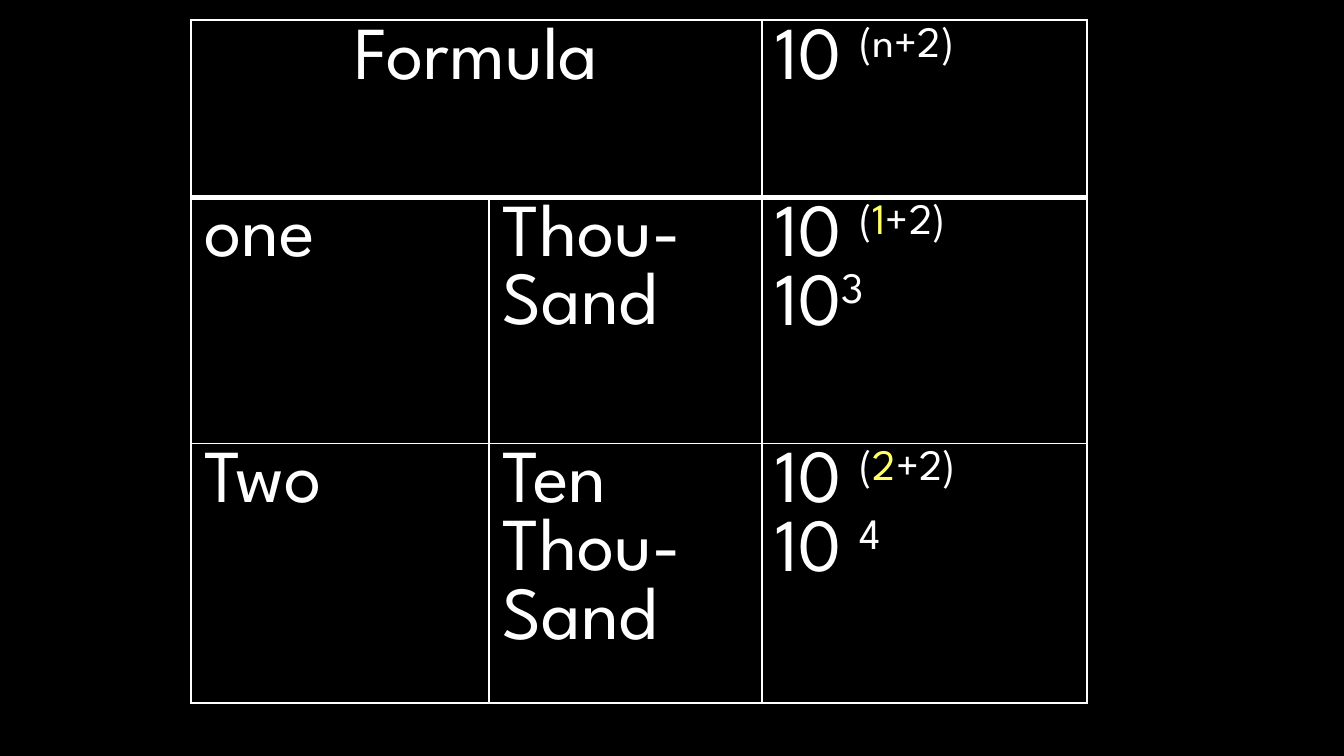
import pptx
import pptx.util
import pptx.dml.color
import pptx.enum.text
import pptx.oxml

Inches, Pt = pptx.util.Inches, pptx.util.Pt
RGB = pptx.dml.color.RGBColor.from_string
ALIGN = pptx.enum.text.PP_ALIGN
HUES = {"back": "000000", "text": "FFFFFF", "mark": "FFFF66"}
NS = "http://schemas.openxmlformats.org/drawingml/2006/main"
FONT = {"name": "League Spartan", "size": Pt(40), "bold": False}


# Each cell is a list of lines; each line lists (text, raised, colour) runs.
def power(n):
    return [("10 ", False, "text"), ("(", True, "text"),
            (n, True, "mark"), ("+2)", True, "text")]


def plain(*lines):
    return [[(line, False, "text")] for line in lines]


rows = [
    [plain("Formula"), [],
     [[("10 ", False, "text"), ("(n+2)", True, "text")]]],
    [plain("one"), plain("Thou-", "Sand"),
     [power("1"), [("10", False, "text"), ("3", True, "text")]]],
    [plain("Two"), plain("Ten", "Thou-", "Sand"),
     [power("2"), [("10 ", False, "text"), ("4", True, "text")]]],
]
widths = [2.22, 2.03, 2.42]
heights = [1.32, 1.83, 1.93]

deck = pptx.Presentation()
deck.slide_width = Inches(10)
deck.slide_height = Inches(10) * 9 // 16
slide = deck.slides.add_slide(deck.slide_layouts[6])
slide.background.fill.solid()
slide.background.fill.fore_color.rgb = RGB(HUES["back"])

frame = slide.shapes.add_table(
    len(rows), len(widths), Inches(1.42), Inches(0.15),
    Inches(sum(widths)), Inches(sum(heights)))
table = frame.table
table.first_row = table.horz_banding = False
for col, width in zip(table.columns, widths):
    col.width = Inches(width)
for row, height in zip(table.rows, heights):
    row.height = Inches(height)
frame.height = Inches(5.25)
table.cell(0, 0).merge(table.cell(0, 1))

for r, row in enumerate(rows):
    for c, lines in enumerate(row):
        cell = table.cell(r, c)
        # The rule below the heading row is thicker than the rest.
        edges = {"L": 1, "R": 1, "T": 3 if r == 1 else 1,
                 "B": 3 if r == 0 else 1}
        for side, width in edges.items():
            cell._tc.get_or_add_tcPr().append(pptx.oxml.parse_xml(
                f'<a:ln{side} xmlns:a="{NS}" w="{Pt(width)}"><a:solidFill>'
                f'<a:srgbClr val="{HUES["text"]}"/></a:solidFill></a:ln{side}>'))
        cell.fill.solid()
        cell.fill.fore_color.rgb = RGB(HUES["back"])
        for i, line in enumerate(lines):
            body = cell.text_frame
            para = body.add_paragraph() if i else body.paragraphs[0]
            para.alignment = ALIGN.CENTER if r == c == 0 else ALIGN.LEFT
            for text, raised, hue in line:
                run = para.add_run()
                run.text = text
                for key, value in FONT.items():
                    setattr(run.font, key, value)
                run.font.color.rgb = RGB(HUES[hue])
                if raised:
                    run._r.get_or_add_rPr().set("baseline", "30000")

deck.save("out.pptx")
